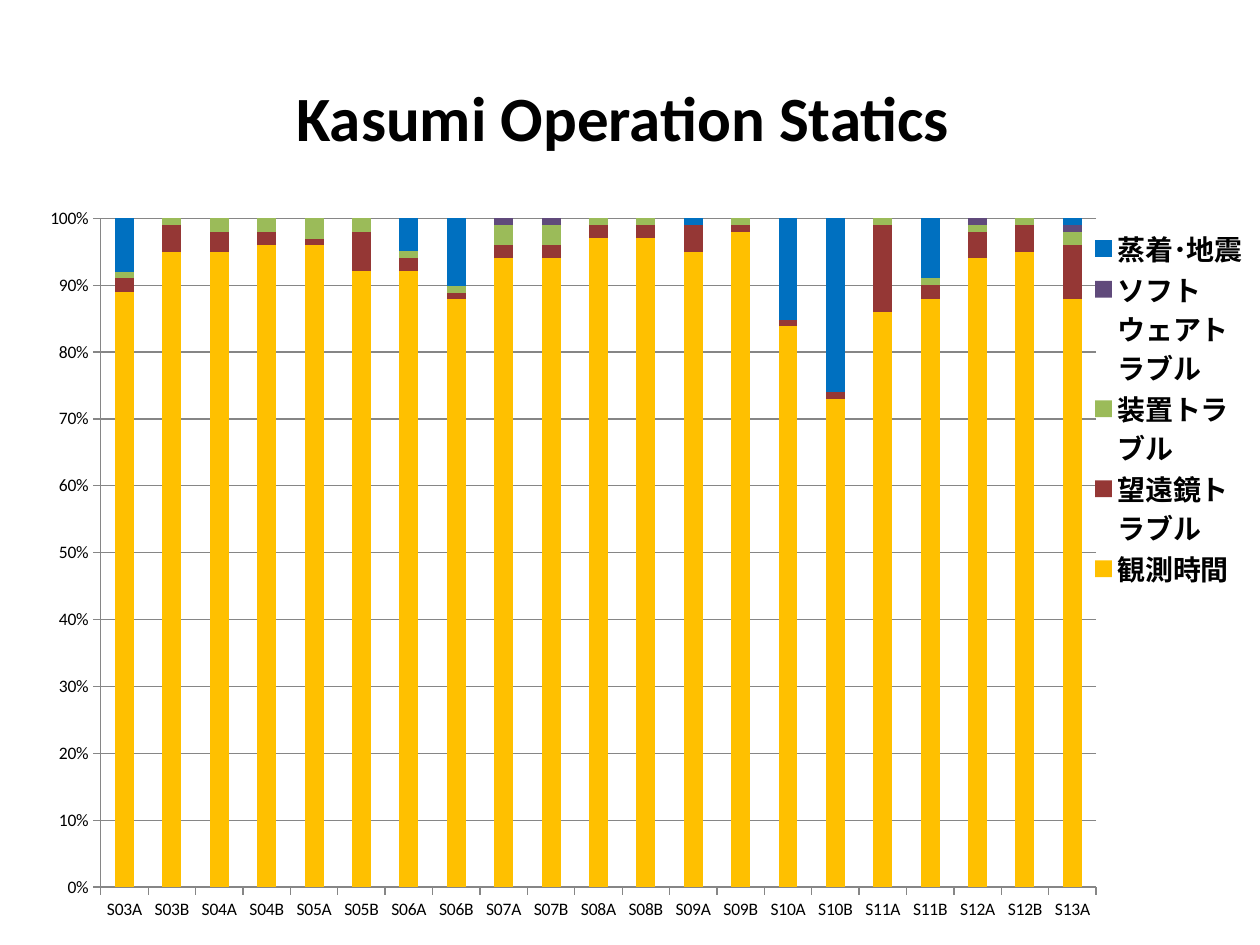
from dataclasses import dataclass
from pptx import Presentation
from pptx.chart.data import CategoryChartData as Data
from pptx.dml.color import RGBColor as Color
from pptx.enum.chart import XL_CHART_TYPE as Kind, XL_LEGEND_POSITION as Side, XL_TICK_MARK as Tick
from pptx.enum.text import MSO_ANCHOR as Anchor, PP_ALIGN as Align
from pptx.oxml import parse_xml
from pptx.oxml.ns import nsdecls, qn
from pptx.util import Emu, Pt


@dataclass(frozen=True)
class Theme:
    font: str = "Calibri"
    ink: str = "000000"
    line: str = "868686"
    title: int = 36
    key: int = 16
    label: int = 10
    fills: tuple = ("FFC000", "953735", "9BBB59", "604A7B", "0070C0")


TERMS = [f"S{year:02}{half}" for year in range(3, 14) for half in "AB"][:-1]
SHARES = {
    "観測時間": [89, 95, 95, 96, 95, 93, 93, 87, 95, 95, 97, 97, 95, 98, 83, 73, 86, 88, 95, 95, 88],
    "望遠鏡トラブル": [2, 4, 3, 2, 1, 6, 2, 1, 2, 2, 2, 2, 4, 1, 1, 1, 13, 2, 4, 4, 8],
    "装置トラブル": [1, 1, 2, 2, 3, 2, 1, 1, 3, 3, 1, 1, 0, 1, 0, 0, 1, 1, 1, 1, 2],
    "ソフトウェアトラブル": [0, 0, 0, 0, 0, 0, 0, 0, 1, 1, 0, 0, 0, 0, 0, 0, 0, 0, 1, 0, 1],
    "蒸着･地震": [8, 0, 0, 0, 0, 0, 5, 10, 0, 0, 0, 0, 1, 0, 15, 26, 0, 9, 0, 0, 1],
}


def px(n):
    return Emu(round(n * 914400 / 126))


class Deck:
    def __init__(self, theme):
        self.theme = theme
        self.show = Presentation()
        self.show.slide_width, self.show.slide_height = px(1260), px(945)
        self.slide = self.show.slides.add_slide(self.show.slide_layouts[5])

    def style(self, font, size, bold=False):
        font.name, font.size, font.bold = self.theme.font, Pt(size), bold
        font.color.rgb = Color.from_string(self.theme.ink)

    def title(self, text, x, y, w, h):
        box = self.slide.shapes.title
        box.left, box.top, box.width, box.height = map(px, (x, y, w, h))
        frame = box.text_frame
        frame.text = text
        frame.vertical_anchor = Anchor.MIDDLE
        para = frame.paragraphs[0]
        para.alignment = Align.CENTER
        self.style(para.runs[0].font, self.theme.title, True)

    def place(self, node, index, area, inner=False):
        for old in node.findall(qn("c:layout")):
            node.remove(old)
        tags = [("layoutTarget", "inner")] if inner else []
        tags += [("xMode", "edge"), ("yMode", "edge"), *zip("xywh", area)]
        body = "".join(f'<c:{tag} val="{val}"/>' for tag, val in tags)
        node.insert(index, parse_xml(
            f'<c:layout {nsdecls("c")}><c:manualLayout>{body}</c:manualLayout></c:layout>'))

    def stroke(self, line):
        line.color.rgb = Color.from_string(self.theme.line)
        line.width = Pt(0.75)

    def stack(self, terms, shares, x, y, w, h):
        data = Data()
        data.categories = terms
        for name, vals in shares.items():
            data.add_series(name, vals)
        chart = self.slide.shapes.add_chart(
            Kind.COLUMN_STACKED_100, *map(px, (x, y, w, h)), data).chart
        chart.has_title = False
        self.style(chart.font, self.theme.label)
        plot = chart.plots[0]
        plot.gap_width, plot.overlap, plot.vary_by_categories = 150, 100, False
        for part, fill in zip(plot.series, self.theme.fills):
            part.format.fill.solid()
            part.format.fill.fore_color.rgb = Color.from_string(fill)
        for axis in (chart.category_axis, chart.value_axis):
            axis.major_tick_mark, axis.minor_tick_mark = Tick.OUTSIDE, Tick.NONE
            self.stroke(axis.format.line)
        axis.minimum_scale, axis.maximum_scale, axis.major_unit = 0, 1, 0.1
        axis.has_major_gridlines = True
        self.stroke(axis.major_gridlines.format.line)
        axis.tick_labels.number_format = "0%"
        axis.tick_labels.number_format_is_linked = False
        chart.has_legend = True
        key = chart.legend
        key.position, key.include_in_layout = Side.RIGHT, False
        self.style(key.font, self.theme.key, True)
        self.place(chart.element.find(".//" + qn("c:plotArea")), 0, (0.08, 0.22, 0.79, 0.72), True)
        self.place(chart.element.find(".//" + qn("c:legend")), 1, (0.87, 0.23, 0.12, 0.39))


def main():
    deck = Deck(Theme())
    deck.title("Kasumi Operation Statics ", 63, 37, 1134, 158)
    deck.stack(TERMS, SHARES, 0, 14, 1260, 929)
    deck.show.save("out.pptx")


if __name__ == "__main__":
    main()
